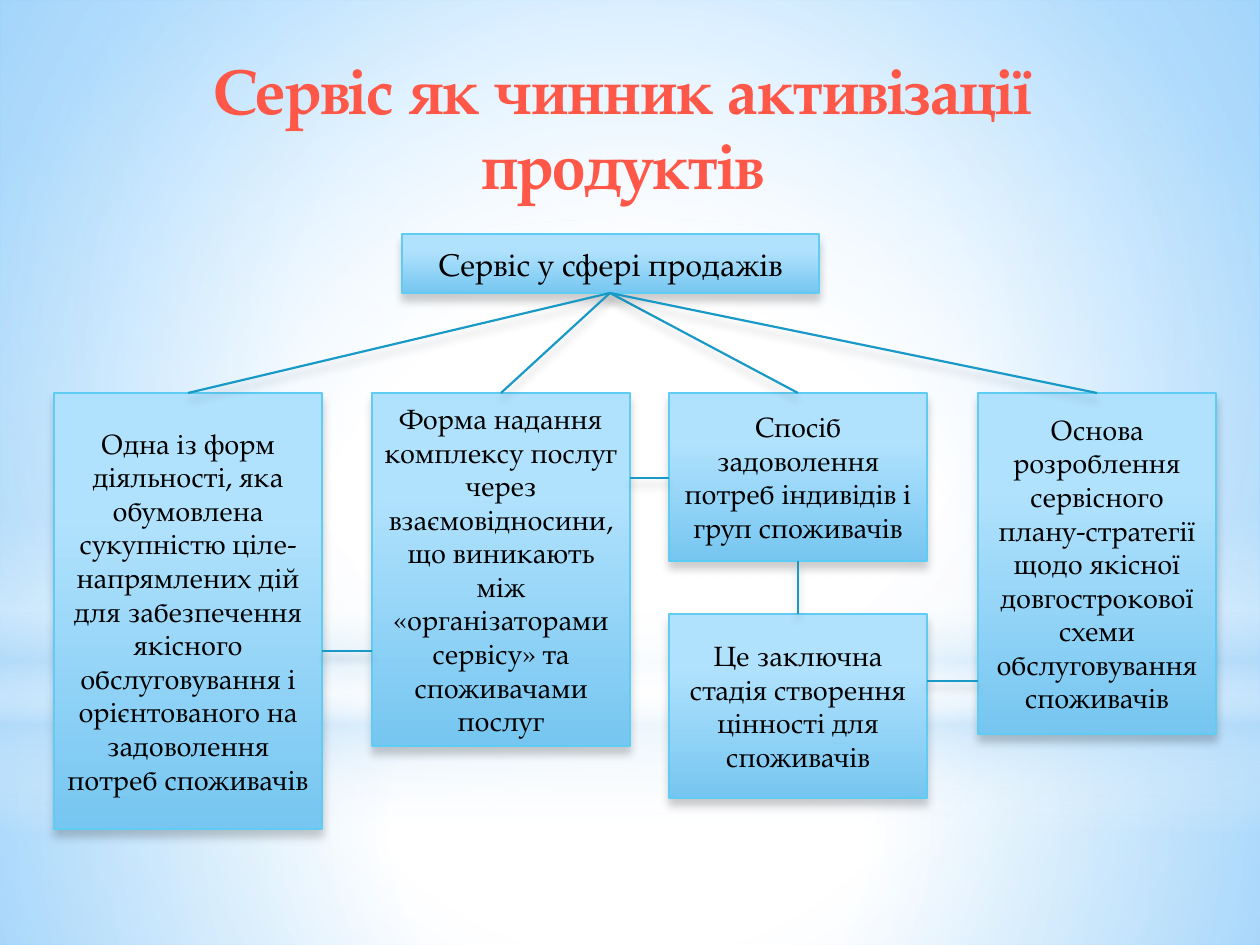
from dataclasses import dataclass

from lxml import etree
from pptx import Presentation
from pptx.dml.color import RGBColor
from pptx.enum.shapes import MSO_CONNECTOR, MSO_SHAPE
from pptx.enum.text import MSO_ANCHOR, MSO_AUTO_SIZE, PP_ALIGN
from pptx.oxml import parse_xml
from pptx.oxml.ns import nsdecls, qn
from pptx.util import Emu, Pt

RECT, OVAL = MSO_SHAPE.RECTANGLE, MSO_SHAPE.OVAL
STRAIGHT = MSO_CONNECTOR.STRAIGHT
CENTER, MIDDLE, TOP = PP_ALIGN.CENTER, MSO_ANCHOR.MIDDLE, MSO_ANCHOR.TOP
FIXED = MSO_AUTO_SIZE.NONE
SCALE = 914400 / 126
FONT = "TeX Gyre Pagella"
HEX = {
    "white": "FFFFFF", "sky": "63BCFF", "mist": "B4DCFA",
    "light": "B1E2FD", "deep": "76C6F1", "edge": "5ECCF3",
    "link": "1999C6", "text": "000000",
    "rose": "FF6155", "coral": "FF5748", "red": "EF3718",
}


@dataclass(frozen=True)
class Grad:
    """Stops are (position, colour, opacity) in percent; focus makes it radial."""
    stops: tuple[tuple[int, str, int], ...]
    focus: tuple[int, int, int, int] | None = None


@dataclass(frozen=True)
class Box:
    x: int
    y: int
    w: int
    h: int
    text: str = ""
    size: int = 16

    @property
    def mid(self) -> int:
        return self.x + self.w // 2

    @property
    def right(self) -> int:
        return self.x + self.w

    @property
    def foot(self) -> int:
        return self.y + self.h


@dataclass(frozen=True)
class Decor:
    box: Box
    grad: Grad
    kind: MSO_SHAPE = RECT


BACK = Grad(((0, "white", 100), (42, "white", 100), (100, "sky", 100)), (24, 44, 24, 12))
CARD = Grad(((28, "light", 100), (100, "deep", 100)))
TITLE = Grad(((0, "rose", 100), (25, "coral", 100), (50, "red", 100),
              (75, "coral", 100), (100, "rose", 100)))
HALF = (50, 50, 50, 50)
DECOR = (
    Decor(Box(0, 703, 1260, 242),
          Grad(((0, "white", 91), (37, "white", 76), (100, "mist", 79)), HALF)),
    Decor(Box(0, 0, 1260, 703),
          Grad(((0, "white", 89), (48, "white", 62), (100, "mist", 79)), HALF)),
    Decor(Box(0, 519, 1260, 315),
          Grad(((0, "white", 0), (29, "white", 30), (45, "mist", 40),
                (55, "white", 26), (65, "mist", 60), (100, "white", 0)))),
    Decor(Box(0, 220, 1260, 703),
          Grad(((0, "white", 100), (56, "white", 0)), HALF), OVAL),
)

ROW = 393
HEAD = Box(402, 234, 417, 59, "Сервіс у сфері продажів", 18)
FORM = Box(54, ROW, 268, 436,
           "Одна із форм діяльності, яка обумовлена сукупністю ціле-напрямлених дій "
           "для забезпечення якісного обслуговування і орієнтованого на задоволення "
           "потреб споживачів")
OFFER = Box(372, ROW, 258, 353,
            "Форма надання комплексу послуг через взаємовідносини, що виникають між "
            "«організаторами сервісу» та споживачами послуг")
STAGE = Box(669, 614, 258, 184, "Це заключна стадія створення цінності для споживачів")
MEANS = Box(669, ROW, 258, 168, "Спосіб задоволення потреб індивідів і груп споживачів")
PLAN = Box(978, ROW, 238, 341,
           "Основа розроблення сервісного плану-стратегії щодо якісної довгострокової "
           "схеми обслуговування споживачів")


def px(value: int) -> Emu:
    return Emu(round(value * SCALE))


def rgb(name: str) -> RGBColor:
    return RGBColor.from_string(HEX[name])


def shade(parent: etree._Element, grad: Grad) -> None:
    """Swap the solid fill of an element for a gradient."""
    stops = "".join(
        f'<a:gs pos="{pos * 1000}"><a:srgbClr val="{HEX[name]}">'
        f'<a:alpha val="{alpha * 1000}"/></a:srgbClr></a:gs>'
        for pos, name, alpha in grad.stops)
    if grad.focus:
        sides = " ".join(f'{side}="{val * 1000}"' for side, val in zip("ltrb", grad.focus))
        way = f'<a:path path="circle"><a:fillToRect {sides}/></a:path>'
    else:
        way = '<a:lin ang="5400000" scaled="0"/>'
    fill = parse_xml(f'<a:gradFill {nsdecls("a")} rotWithShape="1">'
                     f'<a:gsLst>{stops}</a:gsLst>{way}</a:gradFill>')
    parent.replace(parent.find(qn("a:solidFill")), fill)


def cast(item) -> None:
    """Add a soft shadow below a shape or connector."""
    item._element.spPr.append(parse_xml(
        f'<a:effectLst {nsdecls("a")}><a:outerShdw blurRad="{Pt(5)}" dist="{Pt(4)}" '
        f'dir="5400000" rotWithShape="0"><a:srgbClr val="{HEX["text"]}">'
        '<a:alpha val="20000"/></a:srgbClr></a:outerShdw></a:effectLst>'))


def write(frame, text: str, size: int, color: str, bold: bool = False):
    """Fill a frame with one centred run and return the run."""
    frame.word_wrap = True
    line = frame.paragraphs[0]
    line.alignment = CENTER
    run = line.add_run()
    run.text = text
    run.font.name, run.font.size, run.font.bold = FONT, Pt(size), bold
    run.font.color.rgb = rgb(color)
    return run


def place(slide, box: Box, grad: Grad, kind: MSO_SHAPE = RECT):
    shape = slide.shapes.add_shape(kind, px(box.x), px(box.y), px(box.w), px(box.h))
    shape.fill.solid()
    shade(shape._element.spPr, grad)
    return shape


def add_decor(slide, item: Decor) -> None:
    shape = place(slide, item.box, item.grad, item.kind)
    shape.line.fill.background()
    shape.shadow.inherit = False


def add_card(slide, box: Box) -> None:
    shape = place(slide, box, CARD)
    shape.line.color.rgb = rgb("edge")
    shape.line.width = Pt(0.75)
    cast(shape)
    shape.text_frame.vertical_anchor = MIDDLE
    write(shape.text_frame, box.text, box.size, "text")


def add_link(slide, x1: int, y1: int, x2: int, y2: int) -> None:
    link = slide.shapes.add_connector(STRAIGHT, px(x1), px(y1), px(x2), px(y2))
    link.line.color.rgb = rgb("link")
    link.line.width = Pt(1.25)
    cast(link)


def set_title(slide, box: Box) -> None:
    title = slide.shapes.title
    title.left, title.top, title.width, title.height = map(px, (box.x, box.y, box.w, box.h))
    frame = title.text_frame
    frame.auto_size, frame.vertical_anchor = FIXED, TOP
    run = write(frame, box.text, box.size, "coral", True)
    shade(run.font._element, TITLE)
    slide.shapes._spTree.append(title._element)


def main() -> None:
    deck = Presentation()
    deck.slide_width, deck.slide_height = px(1260), px(945)
    slide = deck.slides.add_slide(deck.slide_layouts[5])
    slide.background.fill.solid()
    shade(slide._element.xpath(".//p:bgPr")[0], BACK)
    for item in DECOR:
        add_decor(slide, item)
    set_title(slide, Box(174, 45, 897, 158, "Сервіс як чинник активізації продуктів", 36))
    for box in (HEAD, FORM, OFFER, STAGE, MEANS, PLAN):
        add_card(slide, box)
    for box in (FORM, OFFER, MEANS, PLAN):
        add_link(slide, box.mid, box.y, HEAD.mid, HEAD.foot)
    for left, right, y in ((FORM, OFFER, 651), (OFFER, MEANS, 478), (STAGE, PLAN, 681)):
        add_link(slide, left.right, y, right.x, y)
    add_link(slide, MEANS.mid, MEANS.foot, STAGE.mid, STAGE.y)
    deck.save("out.pptx")


if __name__ == "__main__":
    main()
